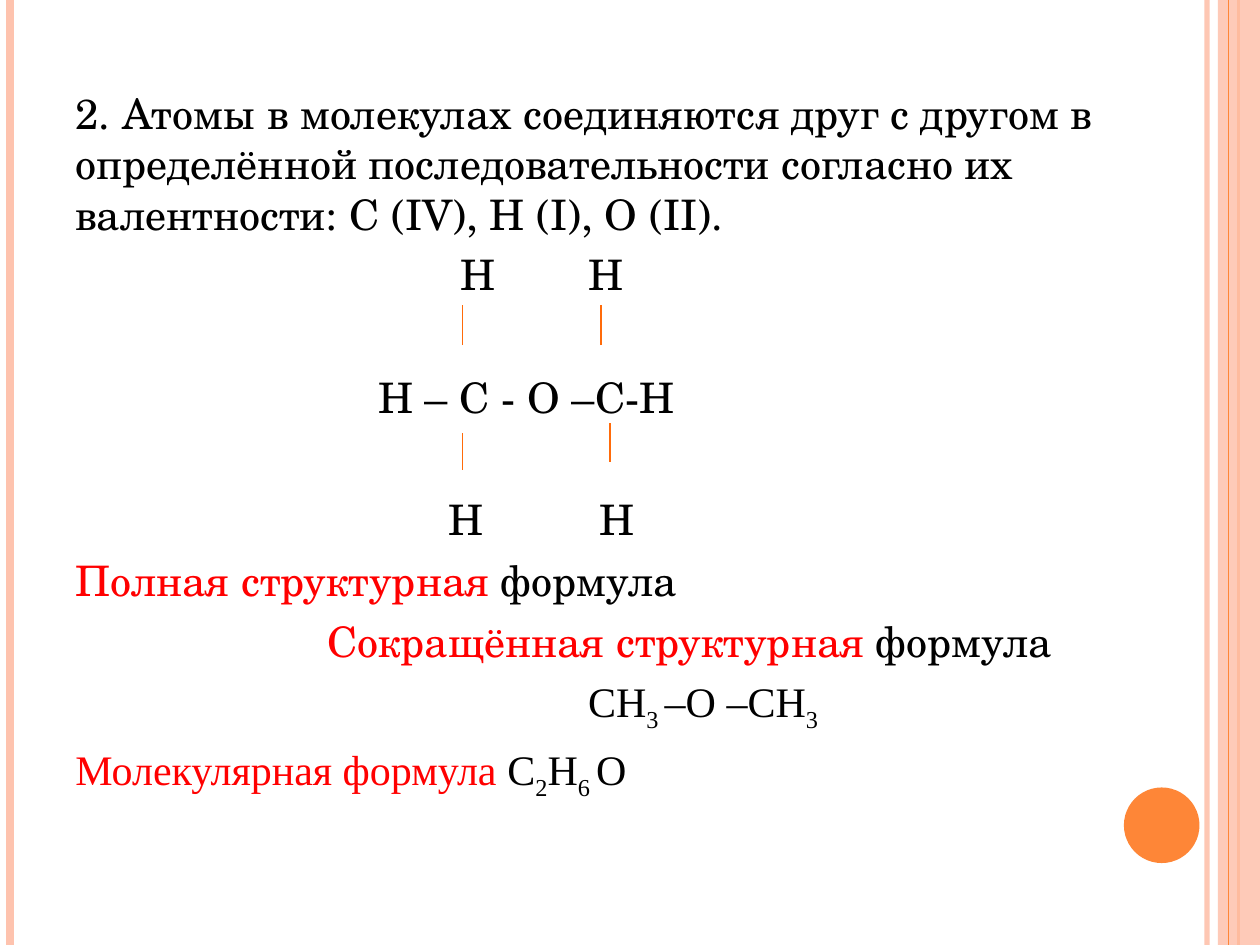
from lxml import etree
from pptx import Presentation
from pptx.dml.color import RGBColor
from pptx.enum.shapes import MSO_CONNECTOR, MSO_SHAPE
from pptx.oxml.ns import qn
from pptx.util import Pt

LINE = MSO_CONNECTOR.STRAIGHT
RECT = MSO_SHAPE.RECTANGLE
OVAL = MSO_SHAPE.OVAL
PINK = RGBColor(0xFE, 0xC3, 0xAE)
ORANGE = RGBColor(0xFE, 0x86, 0x37)
BOND = RGBColor(0xFF, 0x6B, 0x0A)
RED = RGBColor(0xFF, 0, 0)
BLACK = RGBColor(0, 0, 0)
SERIF = "TeX Gyre Schola"
TIMES = "Times New Roman"

deck = Presentation()
deck.slide_width, deck.slide_height = Pt(720), Pt(540)
slide = deck.slides.add_slide(deck.slide_layouts[6])
shapes = slide.shapes


def fade(shape, alpha):
    tint = next(shape._element.spPr.iter(qn("a:srgbClr")))
    etree.SubElement(tint, qn("a:alpha")).set("val", str(alpha * 1000))


def draw_line(x, top, end, color, width):
    line = shapes.add_connector(LINE, Pt(x), Pt(top), Pt(x), Pt(end))
    line.line.color.rgb = color
    line.line.width = Pt(width)
    etree.SubElement(line._element.spPr, qn("a:effectLst"))
    return line


fade(draw_line(689.76, 0, 540, PINK, 3), 93)
draw_line(5.76, 0, 540, PINK, 4.5)
draw_line(707.76, 0, 540, ORANGE, 1.5)
for kind, x, y, w, h, color, alpha in [
    (RECT, 696, 0, 24, 540, PINK, 87),
    (OVAL, 642.24, 450, 43.2, 43.2, ORANGE, 100),
]:
    shape = shapes.add_shape(kind, Pt(x), Pt(y), Pt(w), Pt(h))
    shape.shadow.inherit = False
    shape.fill.solid()
    shape.fill.fore_color.rgb = color
    shape.line.fill.background()
    if alpha < 100:
        fade(shape, alpha)
    if kind == RECT:
        draw_line(702, 0, 540, ORANGE, 0.75)

rows = [
    (0, SERIF, [], [("2. Атомы в молекулах соединяются друг с другом в определённой "
                     "последовательности согласно их валентности: С (IV), H (I), O (II).", BLACK, 0)]),
    (6, SERIF, [220, 293], [("\tН\tН", BLACK, 0)]),
    (41, SERIF, [173], [("\tН – С - О –С-Н", BLACK, 0)]),
    (41, SERIF, [213, 299.5], [("\tН\tН", BLACK, 0)]),
    (6, SERIF, [], [("Полная структурная ", RED, 0), ("формула", BLACK, 0)]),
    (6, SERIF, [144], [("\tСокращённая структурная ", RED, 0), ("формула", BLACK, 0)]),
    (6, TIMES, [293], [("\tСН", BLACK, 0), ("3 ", BLACK, -25), ("–О –СН", BLACK, 0), ("3", BLACK, -25)]),
    (6, TIMES, [], [("Молекулярная формула ", RED, 0), ("С", BLACK, 0), ("2", BLACK, -25),
                    ("Н", BLACK, 0), ("6 ", BLACK, -25), ("О", BLACK, 0)]),
]
body = shapes.add_textbox(Pt(36), Pt(46.3), Pt(648), Pt(436)).text_frame
body.word_wrap = True
for i, (gap, face, stops, parts) in enumerate(rows):
    para = body.add_paragraph() if i else body.paragraphs[0]
    para.space_before = Pt(gap)
    if stops:
        tabs = etree.SubElement(para._p.get_or_add_pPr(), qn("a:tabLst"))
        for stop in stops:
            etree.SubElement(tabs, qn("a:tab"), pos=str(Pt(stop)), algn="l")
    for text, color, base in parts:
        run = para.add_run()
        run.text = text
        run.font.name = face
        run.font.size = Pt(24)
        run.font.color.rgb = color
        if base:
            run._r.get_or_add_rPr().set("baseline", str(base * 1000))

for x, top, end in [
    (264.24, 247.68, 268.56),
    (264.24, 197.28, 174.24),
    (348.48, 241.92, 264.24),
    (343.44, 197.28, 174.24),
]:
    draw_line(x, top, end, BOND, 1)

deck.save("out.pptx")
